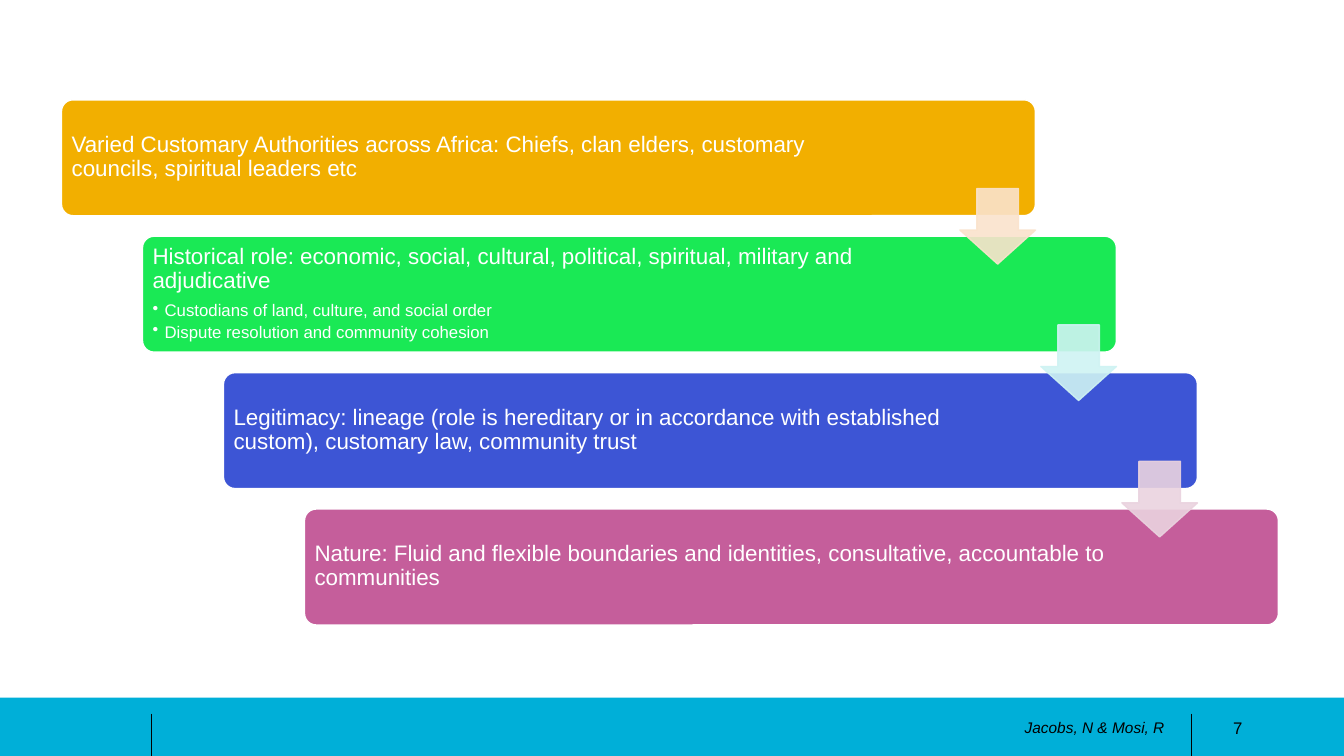
from dataclasses import dataclass

from lxml import etree
from pptx import Presentation
from pptx.dml.color import RGBColor
from pptx.enum.shapes import MSO_CONNECTOR, MSO_SHAPE
from pptx.enum.text import MSO_ANCHOR, PP_ALIGN
from pptx.oxml.ns import qn
from pptx.shapes.autoshape import Shape
from pptx.slide import Slide
from pptx.text.text import TextFrame
from pptx.util import Inches, Pt

STRAIGHT = MSO_CONNECTOR.STRAIGHT
RECTANGLE = MSO_SHAPE.RECTANGLE
ROUNDED = MSO_SHAPE.ROUNDED_RECTANGLE
DOWN_ARROW = MSO_SHAPE.DOWN_ARROW
MIDDLE = MSO_ANCHOR.MIDDLE
LEFT = PP_ALIGN.LEFT
RIGHT = PP_ALIGN.RIGHT


@dataclass(frozen=True)
class Theme:
    font: str = "Arial"
    white: str = "FFFFFF"
    black: str = "000000"
    band: str = "00AFD8"
    heading_size: int = 16
    bullet_size: int = 12
    author_size: int = 11
    number_size: int = 12


@dataclass(frozen=True)
class Box:
    left: float
    top: float
    width: float
    height: float

    def lengths(self) -> tuple[int, int, int, int]:
        return (Inches(self.left), Inches(self.top),
                Inches(self.width), Inches(self.height))


@dataclass(frozen=True)
class Step:
    heading: str
    fill: str
    text_width: float
    bullets: tuple[str, ...] = ()
    arrow_fill: str = ""


THEME = Theme()
FIRST_CARD = Box(0.61, 0.99, 9.66, 1.15)
LAST_CARD = Box(3.02, 5.05, 9.66, 1.15)
TEXT_OFFSET = 0.03
TEXT_HEIGHT = 1.08
TEXT_INSET = 0.07
ARROW_SIZE = 0.75
ARROW_DROP = 0.88
ARROW_OPACITY = 90
BULLET_INDENT = 0.12
DIVIDERS = (1.5, 11.82)

STEPS = (
    Step("Varied Customary Authorities across Africa: Chiefs, clan elders, "
         "customary councils, spiritual leaders etc",
         "F2AF00", 8.32, arrow_fill="FAE3CC"),
    Step("Historical role: economic, social, cultural, political, spiritual, "
         "military and adjudicative",
         "1AE955", 8.03,
         ("Custodians of land, culture, and social order",
          "Dispute resolution and community cohesion"),
         "CFF3F3"),
    Step("Legitimacy: lineage (role is hereditary or in accordance with "
         "established custom), customary law, community trust",
         "3D55D5", 8.04, arrow_fill="EAD3DF"),
    Step("Nature: Fluid and flexible boundaries and identities, consultative, "
         "accountable to communities",
         "C55E9B", 8.03),
)


def color(value: str) -> RGBColor:
    return RGBColor.from_string(value)


def add_filled_shape(slide: Slide, kind: MSO_SHAPE, box: Box, fill: str,
                     line: str = "") -> Shape:
    shape = slide.shapes.add_shape(kind, *box.lengths())
    shape.shadow.inherit = False
    shape.fill.solid()
    shape.fill.fore_color.rgb = color(fill)
    if line:
        shape.line.color.rgb = color(line)
        shape.line.width = Pt(1)
    else:
        shape.line.fill.background()
    return shape


def add_text_frame(slide: Slide, box: Box) -> TextFrame:
    frame = slide.shapes.add_textbox(*box.lengths()).text_frame
    frame.word_wrap = True
    frame.vertical_anchor = MIDDLE
    return frame


def write_paragraph(frame: TextFrame, text: str, size: int, ink: str,
                    align: PP_ALIGN = LEFT, italic: bool = False,
                    line_spacing: float = 1.0, space_after: float = 0,
                    bullet: bool = False) -> None:
    """Fill the frame's empty first paragraph, or append a new one."""
    paragraph = frame.paragraphs[0]
    if paragraph.runs:
        paragraph = frame.add_paragraph()
    paragraph.alignment = align
    paragraph.line_spacing = line_spacing
    paragraph.space_after = Pt(space_after)
    if bullet:
        paragraph.level = 1
        properties = paragraph._p.get_or_add_pPr()
        properties.set("marL", str(Inches(BULLET_INDENT)))
        properties.set("indent", str(-Inches(BULLET_INDENT)))
        etree.SubElement(properties, qn("a:buChar"), char="•")
    run = paragraph.add_run()
    run.text = text
    run.font.name = THEME.font
    run.font.size = Pt(size)
    run.font.italic = italic
    run.font.color.rgb = color(ink)


def add_card(slide: Slide, step: Step, card: Box) -> None:
    shape = add_filled_shape(slide, ROUNDED, card, step.fill, THEME.white)
    shape.adjustments[0] = 0.1
    frame = add_text_frame(slide, Box(card.left + TEXT_OFFSET, card.top + TEXT_OFFSET,
                                      step.text_width, TEXT_HEIGHT))
    frame.margin_left = frame.margin_right = Inches(TEXT_INSET)
    frame.margin_top = frame.margin_bottom = Inches(TEXT_INSET)
    write_paragraph(frame, step.heading, THEME.heading_size, THEME.white,
                    line_spacing=0.9, space_after=6)
    for bullet in step.bullets:
        write_paragraph(frame, bullet, THEME.bullet_size, THEME.white,
                        line_spacing=0.9, space_after=2.5, bullet=True)


def add_arrow(slide: Slide, step: Step, card: Box) -> None:
    box = Box(card.left + card.width - ARROW_SIZE, card.top + ARROW_DROP,
              ARROW_SIZE, ARROW_SIZE)
    arrow = add_filled_shape(slide, DOWN_ARROW, box, step.arrow_fill, step.arrow_fill)
    arrow.adjustments[0] = 0.55
    arrow.adjustments[1] = 0.45
    for paint in arrow.element.spPr.iter(qn("a:srgbClr")):
        etree.SubElement(paint, qn("a:alpha"), val=str(ARROW_OPACITY * 1000))


def add_divider(slide: Slide, left: float) -> None:
    divider = slide.shapes.add_connector(STRAIGHT, Inches(left), Inches(7.08),
                                         Inches(left), Inches(7.5))
    divider.line.color.rgb = color(THEME.black)
    divider.line.width = Pt(0.5)
    etree.SubElement(divider.element.spPr, qn("a:effectLst"))


def add_footer(slide: Slide) -> None:
    add_filled_shape(slide, RECTANGLE, Box(0, 6.92, 13.33, 0.58), THEME.band)
    for left in DIVIDERS:
        add_divider(slide, left)
    author = add_text_frame(slide, Box(7.62, 7.02, 4.03, 0.4))
    write_paragraph(author, "Jacobs, N & Mosi, R", THEME.author_size, THEME.black,
                    RIGHT, italic=True)
    number = add_text_frame(slide, Box(11.83, 7.02, 0.59, 0.4))
    write_paragraph(number, "7", THEME.number_size, THEME.black, RIGHT)


def add_staircase(slide: Slide) -> None:
    gaps = len(STEPS) - 1
    shift = (LAST_CARD.left - FIRST_CARD.left) / gaps
    drop = (LAST_CARD.top - FIRST_CARD.top) / gaps
    cards = [Box(FIRST_CARD.left + index * shift, FIRST_CARD.top + index * drop,
                 FIRST_CARD.width, FIRST_CARD.height) for index in range(len(STEPS))]
    for step, card in zip(STEPS, cards):
        add_card(slide, step, card)
    for step, card in zip(STEPS, cards):
        if step.arrow_fill:
            add_arrow(slide, step, card)


def main() -> None:
    presentation = Presentation()
    presentation.slide_width = Inches(13.33)
    presentation.slide_height = Inches(7.5)
    slide = presentation.slides.add_slide(presentation.slide_layouts[6])
    add_footer(slide)
    add_staircase(slide)
    presentation.save("out.pptx")


if __name__ == "__main__":
    main()
